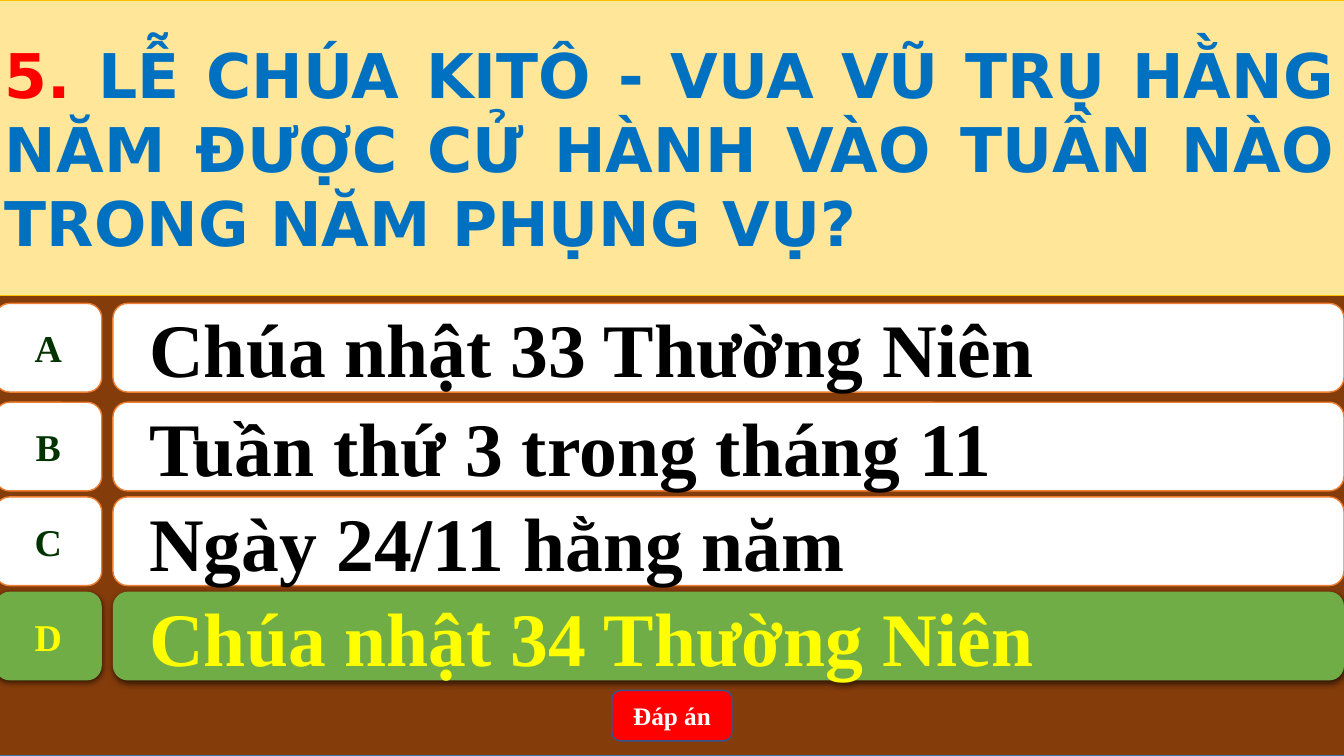
"""Build a quiz slide with a question, four answers and the correct one marked."""
from lxml import etree
from pptx import Presentation
from pptx.dml.color import RGBColor
from pptx.enum import shapes, text
from pptx.oxml import ns
from pptx.util import Inches, Pt

BROWN = RGBColor(0x84, 0x3C, 0x0B)
STEEL = RGBColor(0x43, 0x73, 0x9E)
CREAM = RGBColor(0xFF, 0xE6, 0x99)
GOLD = RGBColor(0xFF, 0xC0, 0x00)
ORANGE = RGBColor(0xED, 0x7D, 0x31)
GREEN = RGBColor(0x70, 0xAD, 0x47)
DARK_GREEN = RGBColor(0x00, 0x33, 0x00)
YELLOW = RGBColor(0xFF, 0xFF, 0x00)
RED = RGBColor(0xFF, 0x00, 0x00)
BLUE = RGBColor(0x00, 0x70, 0xC0)
NAVY = RGBColor(0x32, 0x54, 0x91)
WHITE = RGBColor(0xFF, 0xFF, 0xFF)
BLACK = RGBColor(0x00, 0x00, 0x00)

SHAPE = shapes.MSO_SHAPE
ALIGN = text.PP_ALIGN


def add_box(parent, kind, box, fill, line=None, width=1):
    shape = parent.shapes.add_shape(kind, *(Inches(length) for length in box))
    shape.shadow.inherit = False
    shape.fill.solid()
    shape.fill.fore_color.rgb = fill
    if line is None:
        shape.line.fill.background()
    else:
        shape.line.color.rgb = line
        shape.line.width = Pt(width)
    return shape


def add_text(shape, content, size, color, font="Times New Roman", align=ALIGN.CENTER, wrap=True):
    frame = shape.text_frame
    frame.word_wrap = wrap
    frame.vertical_anchor = text.MSO_ANCHOR.MIDDLE
    paragraph = frame.paragraphs[0]
    paragraph.alignment = align
    run = paragraph.add_run()
    run.text = content
    run.font.name = font
    run.font.size = Pt(size)
    run.font.bold = True
    run.font.color.rgb = color
    return paragraph


presentation = Presentation()
presentation.slide_width = Inches(13.33)
presentation.slide_height = Inches(7.5)
slide = presentation.slides.add_slide(presentation.slide_layouts[6])

add_box(slide, SHAPE.RECTANGLE, (-0.05, 0, 13.39, 7.5), BROWN, STEEL)

answers = [
    ("A", "Chúa nhật 33 Thường Niên", 3.01),
    ("B", "Tuần thứ 3 trong tháng 11", 3.99),
    ("C", "Ngày 24/11 hằng năm", 4.93),
    ("D", "Chúa nhật 34 Thường Niên", 5.87),
]
correct_letter = "D"

for letter, answer, top in answers:
    correct = letter == correct_letter
    fill, line = (GREEN, None) if correct else (WHITE, ORANGE)
    row = slide.shapes.add_group_shape()
    tab = add_box(row, SHAPE.FLOWCHART_ALTERNATE_PROCESS, (-0.05, top, 1.06, 0.88), fill, line)
    add_text(tab, letter, 27, YELLOW if correct else DARK_GREEN, wrap=False)
    bar = add_box(row, SHAPE.ROUNDED_RECTANGLE, (1.12, top, 12.21, 0.88), fill, line)
    paragraph = add_text(bar, answer, 54, YELLOW if correct else BLACK, align=ALIGN.LEFT)
    paragraph.level = 1
    properties = paragraph._p.get_or_add_pPr()
    properties.set("marL", str(Inches(0.5)))
    properties.set("indent", str(Inches(-0.28)))
    if correct:
        for shape in (tab, bar):
            effects = shape._element.spPr.find(ns.qn("a:effectLst"))
            shadow = etree.SubElement(effects, ns.qn("a:outerShdw"), blurRad=str(Pt(4.5)),
                                      dist=str(Pt(1.5)), dir="5400000", algn="ctr", rotWithShape="0")
            color = etree.SubElement(shadow, ns.qn("a:srgbClr"), val=str(BLACK))
            etree.SubElement(color, ns.qn("a:alpha"), val="63000")

button = add_box(slide, SHAPE.ROUNDED_RECTANGLE, (6.07, 6.85, 1.19, 0.5), RED, NAVY)
add_text(button, "Đáp án", 18, WHITE)

question = add_box(slide, SHAPE.RECTANGLE, (-0.05, 0, 13.39, 2.93), CREAM, GOLD, 0.5)
for content, color in (
    ("5. ", RED),
    ("LỄ CHÚA KITÔ - VUA VŨ TRỤ HẰNG NĂM ĐƯỢC CỬ HÀNH VÀO TUẦN NÀO TRONG NĂM PHỤNG VỤ?", BLUE),
):
    add_text(question, content, 44, color, font="DejaVu Sans", align=ALIGN.JUSTIFY)

presentation.save("out.pptx")
